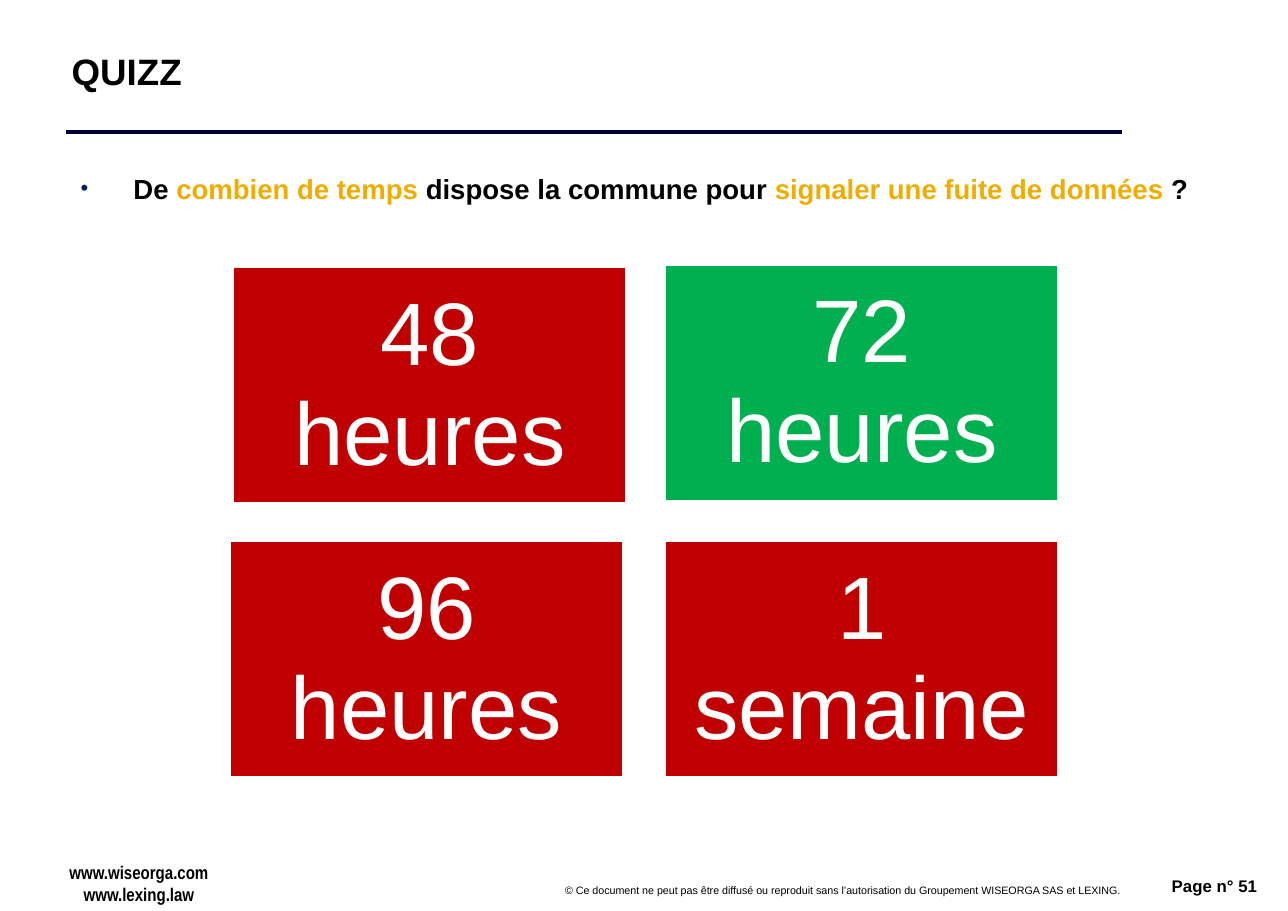
"""Build the quiz slide about the deadline for reporting a data breach."""
from lxml import etree
from pptx import Presentation
from pptx import util as u
from pptx.dml.color import RGBColor
from pptx.enum import shapes, text
from pptx.oxml.ns import qn

BLACK, WHITE, RED, GREEN, AMBER = "000000", "FFFFFF", "C00000", "00B050", "F0AD00"
LEFT, CENTER, RIGHT = text.PP_ALIGN.LEFT, text.PP_ALIGN.CENTER, text.PP_ALIGN.RIGHT
TOP, MIDDLE = text.MSO_ANCHOR.TOP, text.MSO_ANCHOR.MIDDLE


def color(value):
    return RGBColor.from_string(value)


def write(shape, lines, size, align=LEFT, bold=True, font="Arial", anchor=TOP,
          inset=(7.2, 3.6), wrap=True, spacing=1.0):
    """Fill a shape with lines, each a list of (words, colour) runs."""
    frame = shape.text_frame
    frame.word_wrap = wrap
    frame.auto_size = text.MSO_AUTO_SIZE.NONE
    frame.vertical_anchor = anchor
    frame.margin_left = frame.margin_right = u.Pt(inset[0])
    frame.margin_top = frame.margin_bottom = u.Pt(inset[1])
    for index, runs in enumerate(lines):
        paragraph = frame.add_paragraph() if index else frame.paragraphs[0]
        paragraph.alignment = align
        paragraph.line_spacing = spacing
        paragraph.space_before = u.Pt(0)
        for words, shade in runs:
            run = paragraph.add_run()
            run.text = words
            run.font.name = font
            run.font.size = u.Pt(size)
            run.font.bold = bold
            run.font.color.rgb = color(shade)


presentation = Presentation()
presentation.slide_width = u.Pt(841.68)
presentation.slide_height = u.Pt(595.44)
slide = presentation.slides.add_slide(presentation.slide_layouts[1])

title, question = slide.placeholders
title.left, title.top, title.width, title.height = map(u.Pt, (42.5, 12.2, 690.5, 67.7))
title.fill.solid()
title.fill.fore_color.rgb = color(WHITE)
write(title, [[("QUIZZ", BLACK)]], 24, anchor=MIDDLE, inset=(4.3, 4.3))

question.left, question.top, question.width, question.height = map(
    u.Pt, (42.5, 108.7, 747.4, 53.3))
write(question, [[
    ("De ", BLACK),
    ("combien de temps ", AMBER),
    ("dispose la commune pour ", BLACK),
    ("signaler une fuite de données ", AMBER),
    ("?", BLACK),
]], 18)
properties = question.text_frame.paragraphs[0]._p.get_or_add_pPr()
properties.set("marL", str(u.Pt(37.5)))
properties.set("indent", str(u.Pt(-34.5)))
bullet_color = etree.SubElement(properties, qn("a:buClr"))
etree.SubElement(bullet_color, qn("a:srgbClr"), val="002060")
etree.SubElement(properties, qn("a:buSzPct"), val="80000")
etree.SubElement(properties, qn("a:buFont"), typeface="Arial")
etree.SubElement(properties, qn("a:buChar"), char="•")

rule = slide.shapes.add_connector(
    shapes.MSO_CONNECTOR.STRAIGHT, u.Pt(43.2), u.Pt(86.4), u.Pt(733), u.Pt(86.4))
rule.line.color.rgb = color("00003A")
rule.line.width = u.Pt(3)
etree.SubElement(rule._element.spPr, qn("a:effectLst"))

answers = [
    ("48 heures", RED, 151.9, 174.4),
    ("72 heures", GREEN, 434.2, 172.8),
    ("96 heures", RED, 149.8, 353.5),
    ("1 semaine", RED, 434.2, 353.5),
]
for words, fill, left, top in answers:
    card = slide.shapes.add_shape(
        shapes.MSO_SHAPE.RECTANGLE, u.Pt(left), u.Pt(top), u.Pt(257.8), u.Pt(154.8))
    card.shadow.inherit = False
    card.fill.solid()
    card.fill.fore_color.rgb = color(fill)
    card.line.color.rgb = color(WHITE)
    card.line.width = u.Pt(2)
    write(card, [[(words, WHITE)]], 58, align=CENTER, bold=False, anchor=MIDDLE,
          inset=(17.3, 17.3), spacing=0.94)

footers = [
    (["© Ce document ne peut pas être diffusé ou reproduit sans l’autorisation "
      "du Groupement WISEORGA SAS et LEXING."], (275, 573.1, 465.1, 16.6),
     dict(size=7, align=RIGHT, bold=False, inset=(7.9, 4.3))),
    (["Page n° 51"], (741.6, 568.8, 87.1, 24.5), dict(size=11, align=RIGHT)),
    (["www.wiseorga.com", "www.lexing.law"], (35, 558.7, 111.6, 37.4),
     dict(size=12, align=CENTER, font="Arial Narrow", inset=(7.9, 4.3), wrap=False)),
]
for lines, place, style in footers:
    footer = slide.shapes.add_textbox(*map(u.Pt, place))
    write(footer, [[(line, BLACK)] for line in lines], **style)

presentation.save("out.pptx")
